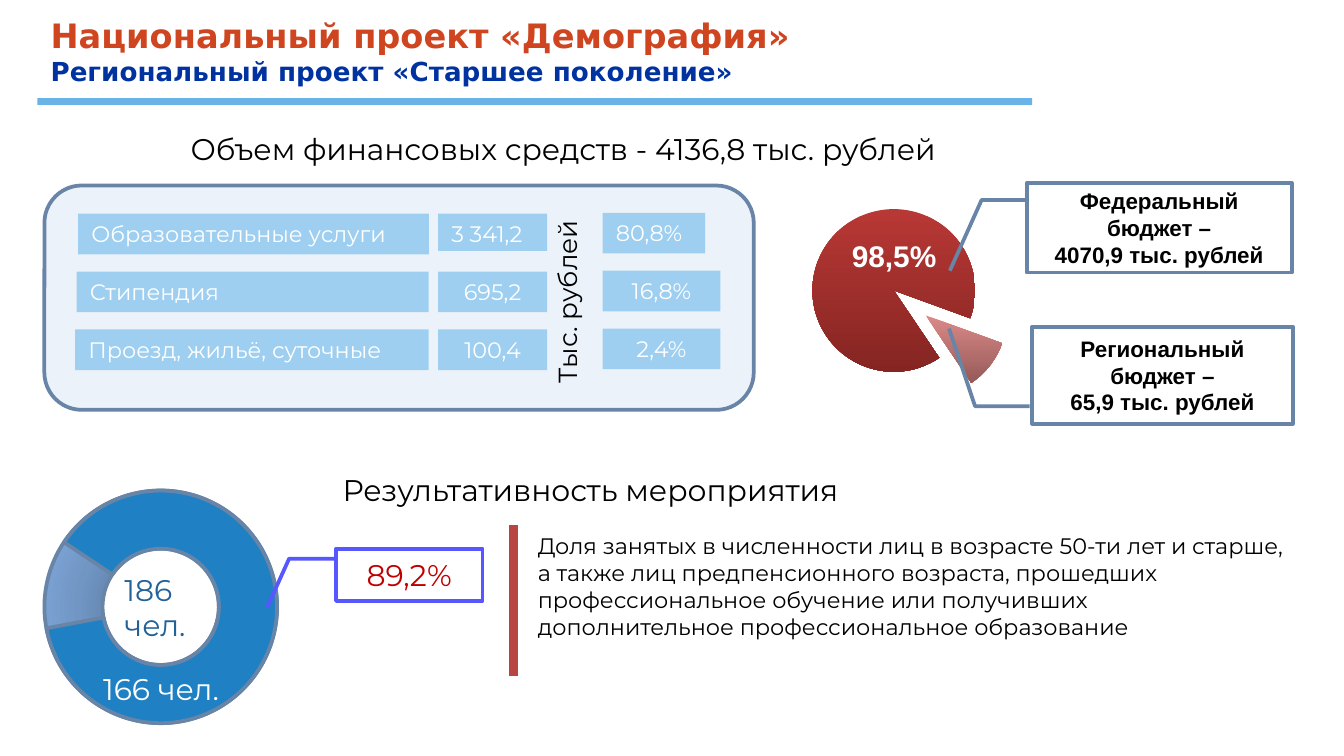
from typing import NamedTuple

from lxml.etree import SubElement
from pptx import Presentation
from pptx.chart.data import CategoryChartData
from pptx.dml.color import RGBColor
from pptx.enum.chart import XL_CHART_TYPE
from pptx.enum.shapes import MSO_CONNECTOR, MSO_SHAPE
from pptx.enum.text import MSO_ANCHOR, MSO_AUTO_SIZE, PP_ALIGN
from pptx.oxml import parse_xml
from pptx.oxml.ns import nsdecls, qn
from pptx.util import Pt

SANS = "Montserrat"
BLACK, WHITE = "000000", "FFFFFF"
STEEL, SKY = "6884A7", "9ECFF0"


class Box(NamedTuple):
    x: float
    y: float
    w: float
    h: float


class Style(NamedTuple):
    size: float
    tint: str = BLACK
    face: str = SANS
    bold: bool = False
    center: bool = False


class Row(NamedTuple):
    label: str
    sum: str
    share: str


class Callout(NamedTuple):
    box: Box
    bends: tuple[float, ...]
    lines: list[str]
    style: Style
    edge: str = STEEL
    fill: str | None = WHITE


def rgb(code: str) -> RGBColor:
    return RGBColor.from_string(code)


def place(box: Box) -> list[Pt]:
    return [Pt(n) for n in box]


def write(shape, lines: list[str], *styles: Style, wrap=True, grow=True):
    """Fill a shape with lines; the last style serves all further lines."""
    frame = shape.text_frame
    frame.word_wrap = wrap
    frame.auto_size = MSO_AUTO_SIZE.SHAPE_TO_FIT_TEXT if grow else MSO_AUTO_SIZE.NONE
    frame.vertical_anchor = MSO_ANCHOR.TOP if grow else MSO_ANCHOR.MIDDLE
    for i, line in enumerate(lines):
        style = styles[min(i, len(styles) - 1)]
        para = frame.paragraphs[0] if i == 0 else frame.add_paragraph()
        para.text = line
        para.alignment = PP_ALIGN.CENTER if style.center else PP_ALIGN.LEFT
        font = para.font
        font.size, font.name, font.bold = Pt(style.size), style.face, style.bold
        font.color.rgb = rgb(style.tint)


def add_text(slide, box: Box, lines: list[str], *styles: Style, wrap=True):
    shape = slide.shapes.add_textbox(*place(box))
    write(shape, lines, *styles, wrap=wrap)
    return shape


def add_shape(slide, kind, box: Box, fill: str | None, edge: str | None = None):
    shape = slide.shapes.add_shape(kind, *place(box))
    shape.shadow.inherit = False
    if fill:
        shape.fill.solid()
        shape.fill.fore_color.rgb = rgb(fill)
    else:
        shape.fill.background()
    if edge:
        shape.line.color.rgb = rgb(edge)
        shape.line.width = Pt(2)
    else:
        shape.line.fill.background()
    return shape


def add_cell(slide, box: Box, text: str, center=False, wrap=True) -> None:
    cell = add_shape(slide, MSO_SHAPE.RECTANGLE, box, SKY)
    write(cell, [text], Style(12, WHITE, center=center), wrap=wrap)


def add_callout(slide, note: Callout) -> None:
    shape = add_shape(slide, MSO_SHAPE.LINE_CALLOUT_2, note.box, note.fill, note.edge)
    for i, bend in enumerate(note.bends):
        shape.adjustments[i] = bend
    write(shape, note.lines, note.style, grow=False)


def add_bar(slide, x: float, top: float, end: float) -> None:
    bar = slide.shapes.add_connector(
        MSO_CONNECTOR.STRAIGHT, Pt(x), Pt(top), Pt(x), Pt(end))
    bar.line.color.rgb = rgb("B84542")
    bar.line.width = Pt(4.5)
    SubElement(bar._element.spPr, qn("a:effectLst"))


def add_glow(shape, stops: list[tuple[int, str]]) -> None:
    """Swap the solid fill of a shape for a round gradient."""
    marks = "".join(f'<a:gs pos="{pos * 1000}"><a:srgbClr val="{tint}"/></a:gs>'
                    for pos, tint in stops)
    glow = parse_xml(
        f'<a:gradFill {nsdecls("a")}><a:gsLst>{marks}</a:gsLst><a:path path="circle">'
        '<a:fillToRect l="50000" t="50000" r="50000" b="50000"/></a:path></a:gradFill>')
    props = shape._element.spPr
    props.replace(props.find(qn("a:solidFill")), glow)


def add_pie(slide, box: Box) -> None:
    data = CategoryChartData()
    data.categories = ["1", "2"]
    data.add_series("Series 1", [90, 10])
    chart = slide.shapes.add_chart(XL_CHART_TYPE.PIE, *place(box), data).chart
    chart.has_legend = chart.has_title = False
    chart.font.size, chart.font.name = Pt(18), "Calibri"
    chart.font.color.rgb = rgb(BLACK)
    plot = chart.plots[0]
    plot.vary_by_categories = False
    series = plot.series[0]
    for i, tints in enumerate([("B83835", "852522"), ("DB8A88", "955A58")]):
        fill = series.points[i].format.fill
        fill.gradient()
        fill.gradient_angle = 270
        for stop, tint in zip(fill.gradient_stops, tints):
            stop.color.rgb = rgb(tint)
    # Pulled-out slices, first slice angle and plot area
    pull = parse_xml(f'<c:explosion {nsdecls("c")} val="25"/>')
    series._element.find(qn("c:dPt")).addprevious(pull)
    pie = series._element.getparent()
    for old in pie.findall(qn("c:firstSliceAng")):
        pie.remove(old)
    SubElement(pie, qn("c:firstSliceAng")).set("val", "146")
    area = pie.getparent()
    for old in area.findall(qn("c:layout")):
        area.remove(old)
    parts = {"layoutTarget": "inner", "xMode": "edge", "yMode": "edge",
             "x": 0.19, "y": 0.08, "w": 0.62, "h": 0.84}
    marks = "".join(f'<c:{key} val="{val}"/>' for key, val in parts.items())
    area.insert(0, parse_xml(f'<c:layout {nsdecls("c")}><c:manualLayout>{marks}'
                             '</c:manualLayout></c:layout>'))


def main() -> None:
    deck = Presentation()
    deck.slide_width, deck.slide_height = Pt(720), Pt(405)
    slide = deck.slides.add_slide(deck.slide_layouts[6])
    head = Style(16)

    # Title and rule
    add_text(slide, Box(20, 4.3, 544, 46),
             ["Национальный проект «Демография»", "Региональный проект «Старшее поколение»"],
             Style(18, "CF4520", "DejaVu Sans", True),
             Style(14, "0033A0", "DejaVu Sans", True))
    add_shape(slide, MSO_SHAPE.RECTANGLE, Box(20, 52.6, 533, 3.6), "69B3E7")

    # Section heads
    add_text(slide, Box(95, 66.5, 466.5, 26.6),
             ["Объем финансовых средств - 4136,8 тыс. рублей"], head, wrap=False)
    add_text(slide, Box(176.5, 249.3, 303, 26.6),
             ["Результативность мероприятия"], head, wrap=False)

    # Result text
    add_text(slide, Box(281, 281.5, 414, 80),
             ["Доля занятых в численности лиц в возрасте 50-ти лет и старше, "
              "а также лиц предпенсионного возраста, прошедших профессиональное обучение "
              "или получивших дополнительное профессиональное образование"], Style(12))
    add_bar(slide, 275, 281.5, 362)

    # Ring of people
    ring = Box(23.8, 262.8, 124.6, 124.6)
    donut = add_shape(slide, MSO_SHAPE.DONUT, ring, STEEL, STEEL)
    add_glow(donut, [(0, "506A8A"), (50, "7196C4"), (100, "87B2E8")])
    arc = add_shape(slide, MSO_SHAPE.BLOCK_ARC, ring, "1F81C3", STEEL)
    arc.rotation = 169.4
    for i, val in enumerate([26.61, 0, 0.25]):
        arc.adjustments[i] = val
    add_text(slide, Box(59.6, 302.5, 53.3, 46), ["186", "чел."],
             Style(16, "236199"), wrap=False)
    add_text(slide, Box(40.5, 355.7, 91.5, 26.6), ["166 чел."],
             Style(16, WHITE, center=True))

    # Budget pie and callouts
    add_pie(slide, Box(399.6, 97.2, 175.7, 130.3))
    note = Style(12, BLACK, "Arial", True, True)
    for item in [
        Callout(Box(180, 294, 78.5, 28), (0.19, 0.01, 0.19, -0.32, 1.12, -0.47),
                ["89,2%"], Style(16, "C00000", center=True), "5757FF", None),
        Callout(Box(550, 98, 142, 48), (0.19, 0, 0.19, -0.17, 0.98, -0.29),
                ["Федеральный бюджет –", "4070,9 тыс. рублей"], note),
        Callout(Box(553, 175, 139.5, 52), (0.82, -0.01, 0.82, -0.22, 0.02, -0.32),
                ["Региональный бюджет –", "65,9 тыс. рублей"], note),
    ]:
        add_callout(slide, item)
    add_text(slide, Box(449.3, 123.8, 60.5, 26.6), ["98,5%"],
             Style(16, WHITE, "Arial", True), wrap=False)

    # Panel of costs
    add_shape(slide, MSO_SHAPE.ROUNDED_RECTANGLE, Box(23.8, 99.4, 380, 120.2),
              "ECF2FA", STEEL)
    rows = [Row("Образовательные услуги", "3 341,2", "80,8%"),
            Row("Стипендия", "695,2", "16,8%"),
            Row("Проезд, жильё, суточные", "100,4", "2,4%")]
    for i, row in enumerate(rows):
        first = i == 0
        left, top = 41.8 - 0.75 * i, 114.5 + 31 * i
        add_cell(slide, Box(left, top, 229.7 - left, 21.8), row.label)
        add_cell(slide, Box(234.7, top, 58.5, 20 if first else 21.8), row.sum,
                 not first, not first)
        add_cell(slide, Box(322.8, top - 0.5, 55 if first else 63.2, 21.8), row.share,
                 not first, not first)
    unit = add_text(slide, Box(291.6, 106, 31.7, 106.5), ["Тыс. рублей"],
                    Style(14), wrap=False)
    unit._element.txBody.bodyPr.set("vert", "vert270")

    deck.save("out.pptx")


if __name__ == "__main__":
    main()
